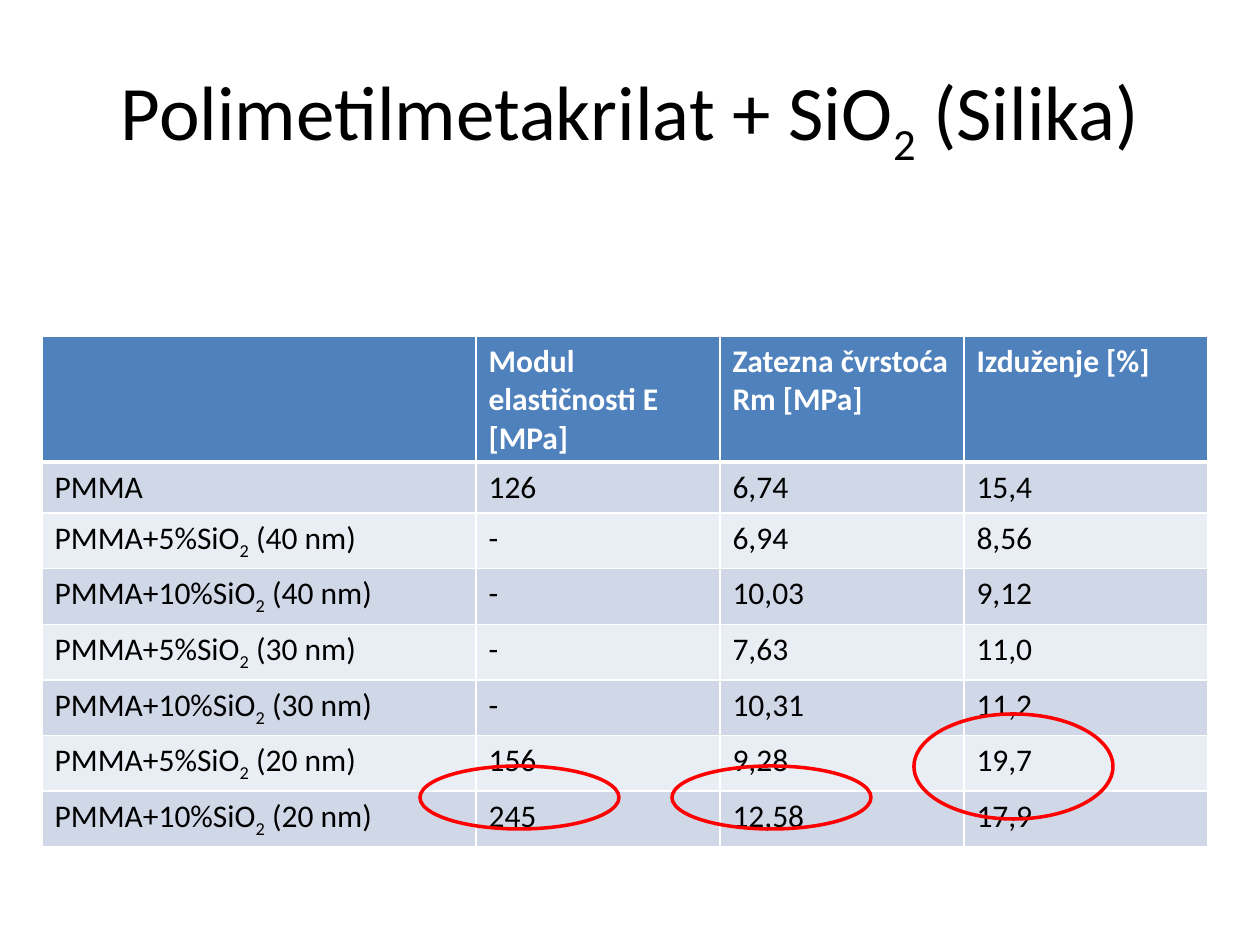
from dataclasses import dataclass

from lxml.etree import SubElement
from pptx import Presentation
from pptx.dml.color import RGBColor as Color
from pptx.enum.shapes import MSO_SHAPE as Shape
from pptx.enum.text import MSO_ANCHOR as Anchor, PP_ALIGN as Align
from pptx.oxml.ns import qn
from pptx.util import Emu, Pt

PX = 914400 / 126


@dataclass(frozen=True)
class Theme:
    font: str = "Calibri"
    title_size: int = 44
    body_size: int = 18
    text: str = "000000"
    header_text: str = "FFFFFF"
    header_fill: str = "4F81BD"
    bands: tuple = ("D0D8E8", "E9EDF4")
    border: str = "FFFFFF"
    highlight: str = "FF0000"


THEME = Theme()

TITLE = "Polimetilmetakrilat + SiO₂ (Silika)"
ROWS = [
    ("", "Modul elastičnosti E [MPa]", "Zatezna čvrstoća Rm [MPa]", "Izduženje [%]"),
    ("PMMA", "126", "6,74", "15,4"),
    ("PMMA+5%SiO₂ (40 nm)", "-", "6,94", "8,56"),
    ("PMMA+10%SiO₂ (40 nm)", "-", "10,03", "9,12"),
    ("PMMA+5%SiO₂ (30 nm)", "-", "7,63", "11,0"),
    ("PMMA+10%SiO₂ (30 nm)", "-", "10,31", "11,2"),
    ("PMMA+5%SiO₂ (20 nm)", "156", "9,28", "19,7"),
    ("PMMA+10%SiO₂ (20 nm)", "245", "12,58", "17,9"),
]
COLUMN_WIDTHS = (434, 244, 244, 244)
ROW_HEIGHT = 51
HIGHLIGHTS = [(672, 766, 199, 63), (420, 766, 199, 63), (914, 714, 199, 105)]


def px(*lengths):
    return [Emu(round(length * PX)) for length in lengths]


def write_formula(para, text, size, color, bold=False):
    """Write text, turning each ₂ into a lowered 2."""
    before, mark, after = text.partition("₂")
    for part, lowered in ((before, False), ("2" if mark else "", True), (after, False)):
        if not part:
            continue
        span = para.add_run()
        span.text = part
        span.font.name = THEME.font
        span.font.size = Pt(size)
        span.font.bold = bold
        span.font.color.rgb = Color.from_string(color)
        if lowered:
            span.font._element.set("baseline", "-25000")


def add_title(page):
    box = page.shapes.add_textbox(*px(63, 38, 1134, 157))
    frame = box.text_frame
    frame.word_wrap = True
    frame.vertical_anchor = Anchor.MIDDLE
    para = frame.paragraphs[0]
    para.alignment = Align.CENTER
    write_formula(para, TITLE, THEME.title_size, THEME.text)


def set_borders(cell, top, bottom):
    """Draw the four cell borders; top and bottom are widths in points."""
    properties = cell._tc.get_or_add_tcPr()
    for side, width in (("L", 1), ("R", 1), ("T", top), ("B", bottom)):
        line = SubElement(properties, qn(f"a:ln{side}"), w=str(Pt(width)))
        fill = SubElement(line, qn("a:solidFill"))
        SubElement(fill, qn("a:srgbClr"), val=THEME.border)


def fill_cell(cell, text, row):
    header = row == 0
    set_borders(cell, top=3 if row == 1 else 1, bottom=3 if header else 1)
    cell.fill.solid()
    fill = THEME.header_fill if header else THEME.bands[(row - 1) % 2]
    cell.fill.fore_color.rgb = Color.from_string(fill)
    color = THEME.header_text if header else THEME.text
    write_formula(cell.text_frame.paragraphs[0], text, THEME.body_size, color, header)


def add_results_table(page):
    area = px(42, 336, sum(COLUMN_WIDTHS), ROW_HEIGHT * len(ROWS))
    table = page.shapes.add_table(len(ROWS), len(COLUMN_WIDTHS), *area).table
    for column, width in zip(table.columns, px(*COLUMN_WIDTHS)):
        column.width = width
    for row, texts in enumerate(ROWS):
        for column, text in enumerate(texts):
            fill_cell(table.cell(row, column), text, row)


def add_highlight(page, area):
    ellipse = page.shapes.add_shape(Shape.OVAL, *px(*area))
    ellipse.shadow.inherit = False
    ellipse.fill.background()
    ellipse.line.color.rgb = Color.from_string(THEME.highlight)
    ellipse.line.width = Pt(2)


def main():
    deck = Presentation()
    deck.slide_width, deck.slide_height = px(1260, 945)
    page = deck.slides.add_slide(deck.slide_layouts[6])
    add_title(page)
    add_results_table(page)
    for area in HIGHLIGHTS:
        add_highlight(page, area)
    deck.save("out.pptx")


if __name__ == "__main__":
    main()
